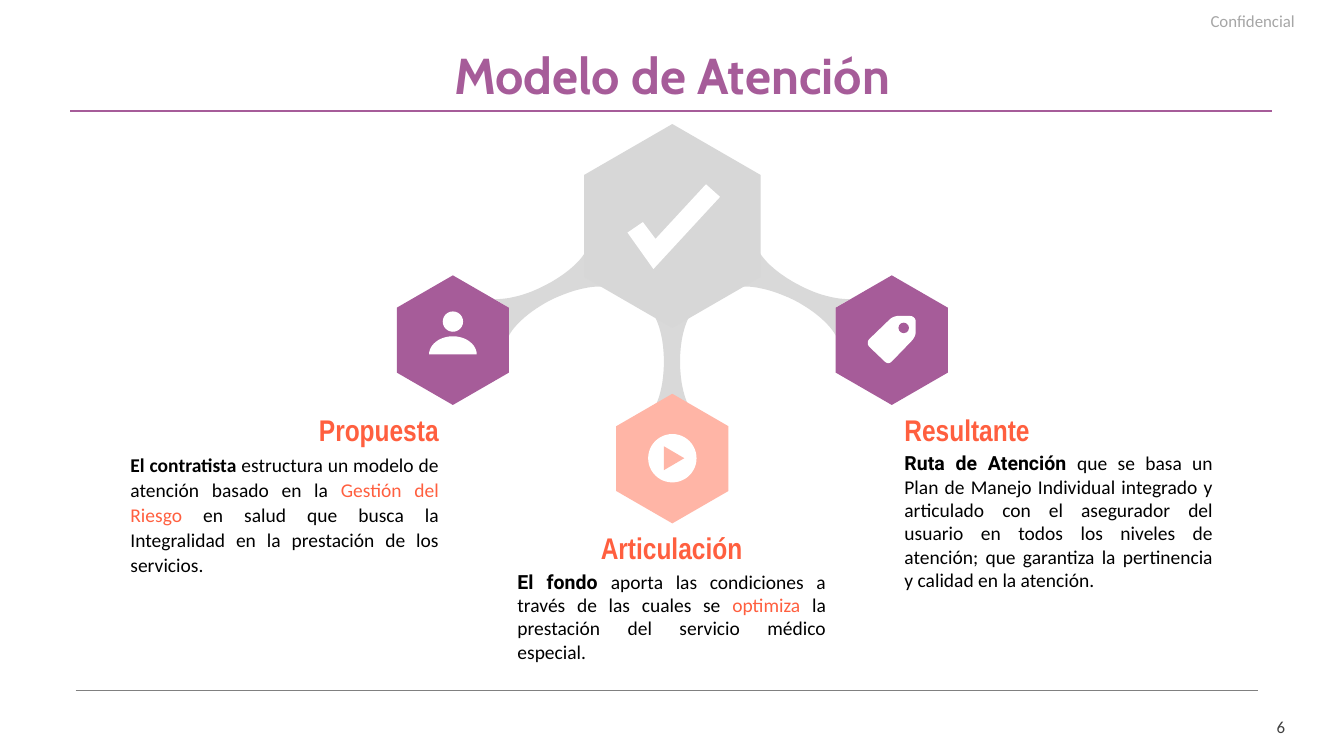
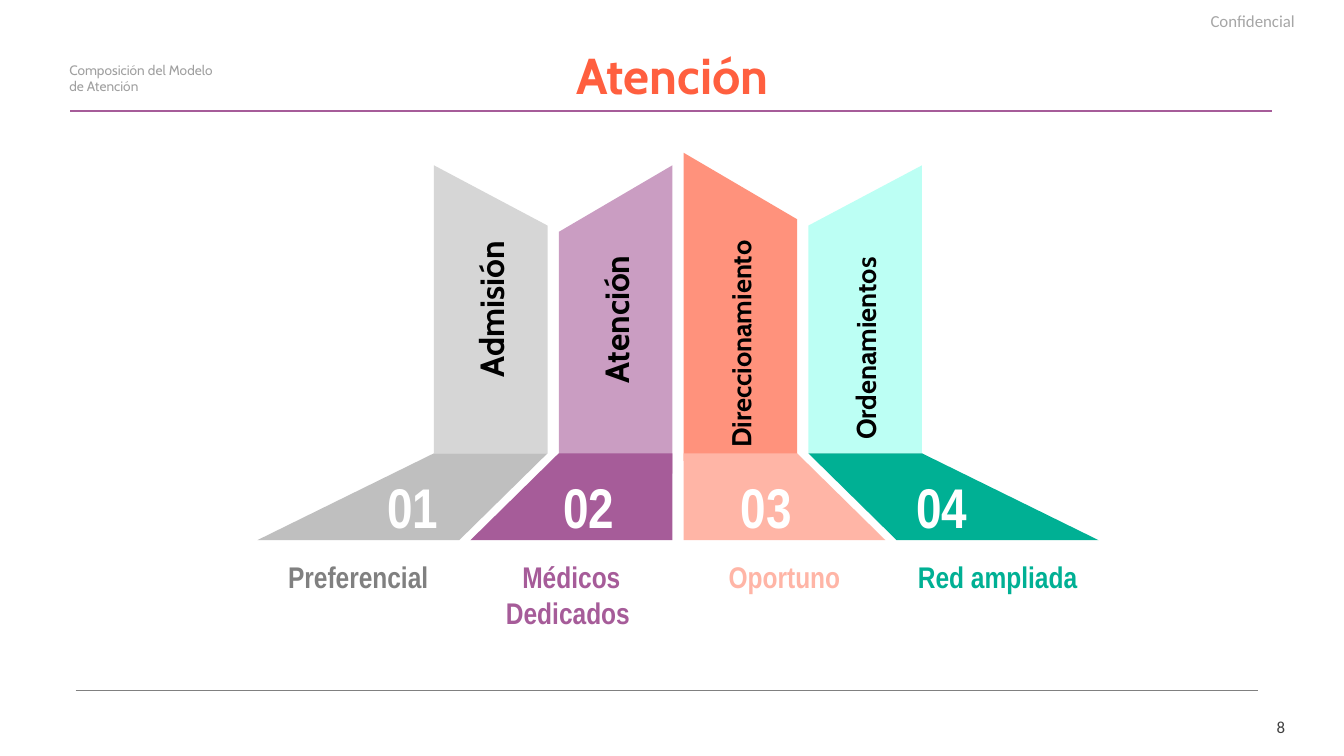
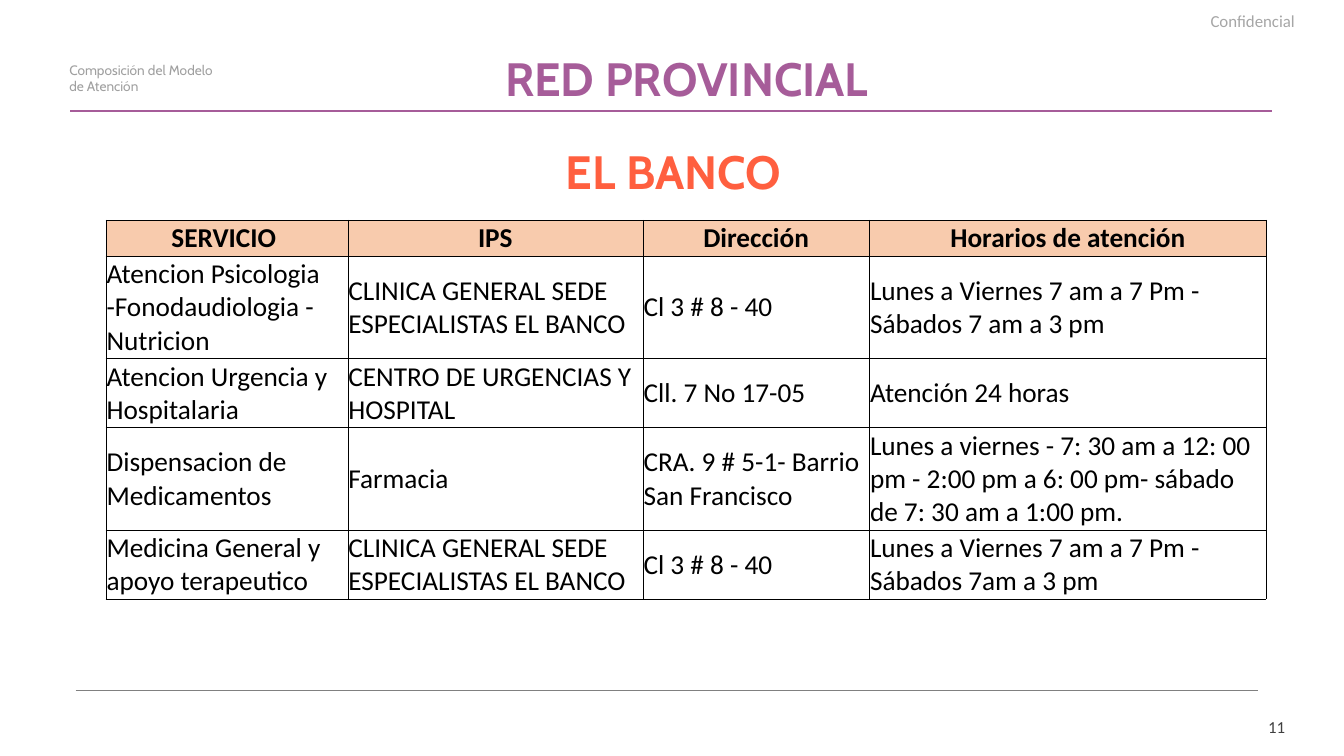
from lxml.etree import SubElement
from pptx import Presentation
from pptx.dml.color import RGBColor
from pptx.enum.shapes import MSO_CONNECTOR, MSO_SHAPE
from pptx.enum.text import MSO_ANCHOR, MSO_AUTO_SIZE, PP_ALIGN
from pptx.oxml.ns import qn
from pptx.util import Inches, Pt

COLS, ROWS = 19.17, 10.79
CELL = 1.0
LEFT, MID, RIGHT, FULL = PP_ALIGN.LEFT, PP_ALIGN.CENTER, PP_ALIGN.RIGHT, PP_ALIGN.JUSTIFY
HEAD, BODY, NARROW, STRONG = "Cabin", "Calibri", "Arial Narrow", "Roboto"
HUE = {
    "plum": "A65C99", "coral": "FF5F3F", "rose": "FFB5A6", "salmon": "FF927C",
    "lilac": "CA9DC2", "mint": "BCFFF4", "teal": "00B094", "black": "000000",
    "white": "FFFFFF", "hub": "D7D7D7", "arm": "D9D9D9", "panel": "D6D6D6",
    "foot": "BFBFBF", "grey": "808080", "note": "A0A0A0", "mark": "A6A6A6",
    "page": "404040", "peach": "F8CBAD",
}

ARM = [(1.21, 1.63), (0.81, 2.42), (0.84, 2.35, 0.93, 2.32, 1.05, 2.32),
       (1.23, 2.32, 1.48, 2.39, 1.73, 2.51), (2.02, 2.66, 2.25, 2.86, 2.33, 3.02),
       (2.33, 2.62), (2.53, 2.5), (2.33, 2.5, 2.08, 2.44, 1.83, 2.31),
       (1.41, 2.1, 1.13, 1.79, 1.21, 1.63)]
STEM = [(-0.45, 2.58), (-0.27, 2.58, -0.12, 2.94, -0.12, 3.39),
        (-0.12, 3.85, -0.27, 4.21, -0.45, 4.21), (0.45, 4.21),
        (0.26, 4.21, 0.11, 3.85, 0.11, 3.39), (0.11, 2.94, 0.26, 2.58, 0.45, 2.58)]
CHECK = [(0.48, 0.86), (-0.24, 1.64), (-0.42, 1.4), (-0.64, 1.55), (-0.27, 2.07), (0.68, 1.04)]
BUST = [(-0.34, 0.21), (-0.34, 0.07, -0.19, -0.05, 0, -0.05), (0.19, -0.05, 0.34, 0.07, 0.34, 0.21)]
PLAY = [(-0.12, -0.17), (0.17, 0), (-0.12, 0.17)]
TAG = [(0.09, -0.34), (0.05, -0.34, 0, -0.32, -0.03, -0.29), (-0.32, -0.01),
       (-0.35, 0.02, -0.35, 0.07, -0.32, 0.1), (-0.1, 0.31),
       (-0.07, 0.34, -0.03, 0.34, 0, 0.31), (0.28, 0.02),
       (0.31, -0.01, 0.34, -0.06, 0.34, -0.1), (0.34, -0.27),
       (0.34, -0.31, 0.3, -0.34, 0.26, -0.34)]


def grid(*cells):
    return [Inches(n * CELL) for n in cells]


def tint(name):
    return RGBColor.from_string(HUE[name])


def run(text, size, font, hue, bold=False):
    return text, size, font, hue, bold


def write(frame, lines, align=LEFT, space=None):
    for n, runs in enumerate(lines):
        para = frame.paragraphs[0] if n == 0 else frame.add_paragraph()
        para.alignment = align
        if space:
            para.line_spacing = space
        for text, size, font, hue, bold in runs:
            part = para.add_run()
            part.text = text
            part.font.size = Pt(size)
            part.font.name = font
            part.font.bold = bold
            part.font.color.rgb = tint(hue)


def inset(frame, x, y):
    frame.margin_left, frame.margin_right, frame.margin_top, frame.margin_bottom = grid(x, x, y, y)


def label(slide, box, lines, align=LEFT, space=None, pad=(0.19, 0.19), anchor=MSO_ANCHOR.TOP):
    shape = slide.shapes.add_textbox(*grid(*box))
    frame = shape.text_frame
    frame.word_wrap = True
    frame.vertical_anchor = anchor
    inset(frame, *pad)
    write(frame, lines, align, space)
    return shape


def paint(shape, hue):
    shape.shadow.inherit = False
    shape.fill.solid()
    shape.fill.fore_color.rgb = tint(hue)
    shape.line.fill.background()
    return shape


def trace(steps):
    points = [steps[0]]
    for step in steps[1:]:
        if len(step) == 2:
            points.append(step)
            continue
        knots = [points[-1], step[:2], step[2:4], step[4:]]
        for n in range(1, 13):
            t = n / 12
            mix = ((1 - t) ** 3, 3 * t * (1 - t) ** 2, 3 * t * t * (1 - t), t ** 3)
            points.append(tuple(sum(m * k[i] for m, k in zip(mix, knots)) for i in (0, 1)))
    return points


def pen(slide, steps, hue, x=0, y=0, flip=1):
    points = [((x + flip * px) * 1000, (y + py) * 1000) for px, py in trace(steps)]
    form = slide.shapes.build_freeform(*points[0], scale=914.4)
    form.add_line_segments(points[1:], close=True)
    return paint(form.convert_to_shape(), hue)


def disc(slide, x, y, size, hue):
    box = grid(x - size / 2, y - size / 2, size, size)
    paint(slide.shapes.add_shape(MSO_SHAPE.OVAL, *box), hue)


def hexa(slide, x, y, w, h, hue):
    pen(slide, [(w / 2, 0), (0, h / 4), (0, h * 3 / 4), (w / 2, h), (w, h * 3 / 4), (w, h / 4)], hue, x, y)


def rule(slide, x, end, y, hue, width):
    line = slide.shapes.add_connector(MSO_CONNECTOR.STRAIGHT, *grid(x, y, end, y))
    line.line.color.rgb = tint(hue)
    line.line.width = Pt(width)
    SubElement(line.element.spPr, qn("a:effectLst"))
    return line


def brand(layout, slide):
    title = layout.placeholders[0]
    title.left, title.top, title.width, title.height = grid(1.32, 0.62, 16.54, 0.99)
    items = [
        rule(slide, 1.08, 17.95, 9.86, "grey", 1),
        rule(slide, 1, 18.15, 1.58, "plum", 2.25),
        label(slide, (13.78, 0.06, 4.75, 0.42), [[run("Confidencial", 17.3, BODY, "mark")]],
              RIGHT, 1.1, (0.06, 0.06)),
    ]
    for n, item in enumerate(items):
        item.element.xpath(".//p:cNvPr")[0].set("id", str(20 + n))
        layout.shapes.element.append(item.element)


def header(slide, text, hue, page, size=51.8, space=0.9, note=True):
    frame = slide.shapes.title.text_frame
    frame.word_wrap = True
    frame.auto_size = MSO_AUTO_SIZE.NONE
    frame.vertical_anchor = MSO_ANCHOR.MIDDLE
    write(frame, [[run(text, size, HEAD, hue, True)]], MID, space)
    label(slide, (17.86, 10.23, 0.47, 0.29), [[run(page, 17.3, BODY, "page")]],
          RIGHT, None, (0, 0), MSO_ANCHOR.BOTTOM)
    if note:
        label(slide, (0.89, 0.83, 2.3, 0.57),
              [[run("Composición del Modelo de Atención", 14, HEAD, "note")]], pad=(0.1, 0.05))


def person(slide, x, y):
    disc(slide, x, y - 0.26, 0.29, "white")
    pen(slide, BUST, "white", x, y)


def video(slide, x, y):
    disc(slide, x, y, 0.69, "white")
    pen(slide, PLAY, "rose", x, y)


def ticket(slide, x, y):
    pen(slide, TAG, "white", x, y)
    disc(slide, x + 0.17, y - 0.17, 0.15, "plum")


def hub(slide, x, y):
    for flip in (1, -1):
        pen(slide, ARM, "arm", x, y, flip)
    pen(slide, STEM, "arm", x, y)
    hexa(slide, x - 1.26, y, 2.52, 2.91, "hub")
    pen(slide, CHECK, "white", x, y)


def node(slide, x, y, left, hue, icon, name, align, runs, space=None):
    hexa(slide, x - 0.8, y, 1.6, 1.85, hue)
    icon(slide, x, y + 0.92)
    label(slide, (left, y + 1.75, 4.78, 0.73), [[run(name, 30.7, NARROW, "coral", True)]], align)
    label(slide, (left, y + 2.32, 4.78, 1.95),
          [[run(text, 20, font, tone, bold) for text, font, tone, bold in runs]], FULL, space)


def model(slide):
    header(slide, "Modelo de Atención", "plum", "6", note=False)
    hub(slide, 9.59, 1.77)
    nodes = [
        (3.93, "plum", person, "Propuesta", RIGHT, [
            ("El contratista", BODY, "black", True),
            (" estructura un modelo de atención basado en la ", BODY, "black", False),
            ("Gestión del Riesgo ", BODY, "coral", False),
            ("en salud que busca la Integralidad en la prestación de los servicios.", BODY, "black", False),
        ], 1.07),
        (5.62, "rose", video, "Articulación", MID, [
            ("El fondo ", STRONG, "black", True),
            ("aporta las condiciones a través de las cuales se ", BODY, "black", False),
            ("optimiza", BODY, "coral", False),
            (" la prestación del servicio médico especial.", BODY, "black", False),
        ]),
        (3.93, "plum", ticket, "Resultante", LEFT, [
            ("Ruta de Atención ", STRONG, "black", True),
            ("que se basa un Plan de Manejo Individual integrado y articulado con el asegurador "
             "del usuario en todos los niveles de atención; que garantiza la pertinencia y "
             "calidad en la atención.", BODY, "black", False),
        ]),
    ]
    for n, (y, *rest) in enumerate(nodes):
        node(slide, 6.46 + 3.13 * n, y, 1.67 + 5.52 * n, *rest)


def pillar(slide, x, foot, tops, base, text, size, align, hues, number, mid, lines):
    wall, floor, tone = hues
    w, span, top, low = 1.62, 2.88, 6.47, 7.71
    shape = pen(slide, [(x, tops[0]), (x + w, tops[1]), (x + w, base), (x, base)], wall)
    frame = shape.text_frame
    frame.word_wrap = True
    frame.vertical_anchor = MSO_ANCHOR.MIDDLE
    inset(frame, 0.19, 0.19)
    shape.element.find(".//" + qn("a:bodyPr")).set("vert", "vert270")
    write(frame, [[run(text, size, HEAD, "black", True)]], align)
    pen(slide, [(x, top), (x + w, top), (foot + span, low), (foot, low)], floor)
    label(slide, (mid - 1.14, 6.55, 2.28, 0.95), [[run(number, 57.5, NARROW, "white", True)]], MID)
    label(slide, (foot, 7.78, span, 0.73), [[run(line, 30.7, NARROW, tone, True)] for line in lines], MID)


def care(slide):
    header(slide, "Atención", "coral", "8")
    pillars = [
        ((2.36, 3.22), 6.47, "Admisión", 34.5, MID, ("panel", "foot", "grey"), "01", 5.89, ["Preferencial"]),
        ((3.31, 2.36), 6.76, "Atención", 34.5, MID, ("lilac", "plum", "plum"), "02", 8.4,
         ["Médicos", "Dedicados "]),
        ((2.18, 3.13), 6.58, "Direccionamiento", 28, LEFT, ("salmon", "rose", "rose"), "03", 10.93,
         ["Oportuno"]),
        ((3.22, 2.36), 6.47, "Ordenamientos", 28, LEFT, ("mint", "teal", "teal"), "04", 13.43,
         ["Red ampliada"]),
    ]
    for n, parts in enumerate(pillars):
        pillar(slide, 6.19 + 1.78 * n, 3.67 + 3.04 * n, *parts)


def edge(cell):
    props = cell._tc.get_or_add_tcPr()
    for n, side in enumerate(("lnL", "lnR", "lnT", "lnB")):
        line = props.makeelement(qn("a:" + side), {"w": str(Pt(0.5))})
        fill = SubElement(line, qn("a:solidFill"))
        SubElement(fill, qn("a:srgbClr"), {"val": HUE["black"]})
        props.insert(n, line)


def chart(slide, box, wide, tall, rows):
    table = slide.shapes.add_table(len(rows), len(wide), *grid(*box)).table
    table.first_row = table.horz_banding = False
    for col, size in zip(table.columns, grid(*wide)):
        col.width = size
    for row, size in zip(table.rows, grid(*tall)):
        row.height = size
    for r, texts in enumerate(rows):
        for c, text in enumerate(texts):
            cell = table.cell(r, c)
            cell.vertical_anchor = MSO_ANCHOR.MIDDLE
            cell.margin_left, cell.margin_right, cell.margin_top, cell.margin_bottom = grid(0.01, 0.01, 0.01, 0)
            if r == 0:
                cell.fill.solid()
                cell.fill.fore_color.rgb = tint("peach")
            else:
                cell.fill.background()
            edge(cell)
            write(cell.text_frame, [[run(text, 28, BODY, "black", r == 0)]], LEFT if r else MID)


def network(slide):
    header(slide, "RED PROVINCIAL", "plum", "11", 48, 1.0)
    title = slide.shapes.title
    title.left, title.top, title.width, title.height = grid(2.98, 0.66, 13.63, 0.91)
    label(slide, (1.07, 1.99, 17.07, 0.91), [[run("EL BANCO", 48, HEAD, "coral", True)]], MID, pad=(0.1, 0.05))
    clinic = "CLINICA GENERAL SEDE ESPECIALISTAS EL BANCO"
    chart(slide, (1.51, 3.14, 16.55, 5.41), (3.45, 4.21, 3.23, 5.66), (0.51, 1.47, 0.98, 1.47, 0.98), [
        ("SERVICIO ", "IPS", "Dirección", "Horarios de atención"),
        ("Atencion Psicologia -Fonodaudiologia - Nutricion", clinic, "Cl 3 # 8 - 40",
         "Lunes a Viernes 7 am a 7 Pm - Sábados 7 am a 3 pm"),
        ("Atencion Urgencia y Hospitalaria", "CENTRO DE URGENCIAS Y HOSPITAL", "Cll. 7 No 17-05",
         "Atención 24 horas"),
        ("Dispensacion de Medicamentos", "Farmacia", "CRA. 9 # 5-1- Barrio San Francisco",
         "Lunes a viernes - 7: 30 am a 12: 00 pm - 2:00 pm a 6: 00 pm- sábado de 7: 30 am a 1:00 pm."),
        ("Medicina General y apoyo terapeutico", clinic, "Cl 3 # 8 - 40",
         "Lunes a Viernes 7 am a 7 Pm - Sábados 7am a 3 pm"),
    ])


def main():
    deck = Presentation()
    deck.slide_width, deck.slide_height = grid(COLS, ROWS)
    layout = deck.slide_layouts[5]
    slides = [deck.slides.add_slide(layout) for _ in range(3)]
    brand(layout, slides[0])
    for build, slide in zip((model, care, network), slides):
        build(slide)
    deck.save("out.pptx")


if __name__ == "__main__":
    main()
